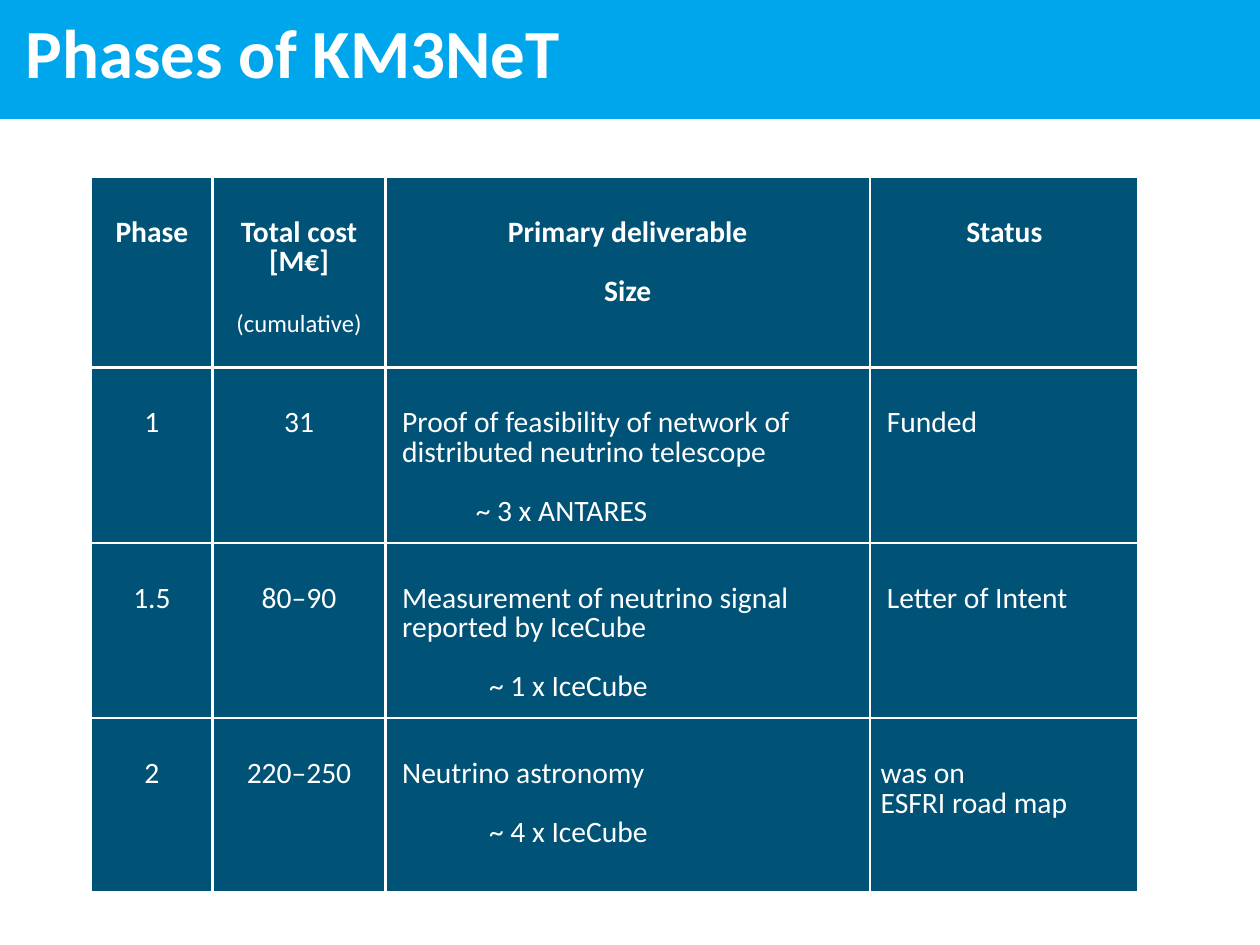
from pptx import Presentation
from pptx.dml.color import RGBColor
from pptx.enum.shapes import MSO_SHAPE
from pptx.enum.text import MSO_ANCHOR, PP_ALIGN
from pptx.oxml.ns import qn
from pptx.util import Inches, Pt
from lxml.etree import SubElement

SLIDE_W, SLIDE_H = 14.22, 10.67
SKY, PETROL, WHITE = "00A6EB", "005376", "FFFFFF"
FONT = "Calibri"
LINE = 24            # line pitch of the table, also the height of a skipped line
COLUMNS = [1.37, 1.95, 5.47, 3.03]
ROWS = [2.15, 1.98, 1.98, 1.97]
TOP_INSET = 0.16 + LINE / 72
TEXT_INDENT = 0.07

# Each line of a cell: (text, style overrides)
HEADER = [
    [("Phase", {})],
    [("Total cost", {}), ("[M€]", {}),
     ("(cumulative)", {"size": 20, "bold": False, "before": LINE})],
    [("Primary deliverable", {}), ("Size", {"before": LINE})],
    [("Status", {})],
]
PHASES = [
    ("1", "31",
     ["Proof of feasibility of network of", "distributed neutrino telescope"],
     "~ 3 x ANTARES", 0.9, ["Funded"], TEXT_INDENT),
    ("1.5", "80–90",
     ["Measurement of neutrino signal", "reported by IceCube"],
     "~ 1 x IceCube", 1.05, ["Letter of Intent"], TEXT_INDENT),
    ("2", "220–250", ["Neutrino astronomy"],
     "~ 4 x IceCube", 1.05, ["was on", "ESFRI road map"], 0),
]


def color(value):
    return RGBColor.from_string(value)


def add_text(paragraph, text, size, bold):
    run = paragraph.add_run()
    run.text = text
    run.font.name = FONT
    run.font.size = Pt(size)
    run.font.bold = bold
    run.font.color.rgb = color(WHITE)


def add_band(slide, left, top, width, height, line_width):
    band = slide.shapes.add_shape(MSO_SHAPE.RECTANGLE, Inches(left), Inches(top),
                                  Inches(width), Inches(height))
    band.shadow.inherit = False
    band.fill.solid()
    band.fill.fore_color.rgb = color(SKY)
    band.line.color.rgb = color(SKY)
    band.line.width = Pt(line_width)
    return band


def add_title(slide, left, top, width, height, text):
    """Draw the full-width header band with the title box inside it."""
    add_band(slide, left, top, width, height, 2)
    title = add_band(slide, left + 0.19, top + 0.25, width - 0.19, height - 0.5, 0.75)
    frame = title.text_frame
    frame.word_wrap = True
    frame.vertical_anchor = MSO_ANCHOR.MIDDLE
    paragraph = frame.paragraphs[0]
    paragraph.alignment = PP_ALIGN.LEFT
    paragraph.line_spacing = 0.8
    add_text(paragraph, text, 56, True)


def add_borders(cell):
    properties = cell._tc.get_or_add_tcPr()
    for position, side in enumerate(("a:lnL", "a:lnR", "a:lnT", "a:lnB")):
        border = SubElement(properties, qn(side), w=str(Pt(2.25)))
        fill = SubElement(border, qn("a:solidFill"))
        SubElement(fill, qn("a:srgbClr"), val=WHITE)
        properties.insert(position, border)


def fill_cell(cell, lines, align, bold, side_inset):
    cell.fill.solid()
    cell.fill.fore_color.rgb = color(PETROL)
    add_borders(cell)
    cell.margin_left = cell.margin_right = Inches(side_inset)
    cell.margin_top, cell.margin_bottom = Inches(TOP_INSET), 0
    frame = cell.text_frame
    for number, (text, style) in enumerate(lines):
        paragraph = frame.add_paragraph() if number else frame.paragraphs[0]
        paragraph.alignment = align
        paragraph.line_spacing = Pt(LINE)
        if "before" in style:
            paragraph.space_before = Pt(style["before"])
        if "indent" in style:
            paragraph._p.get_or_add_pPr().set("marL", str(Inches(style["indent"])))
        add_text(paragraph, text, style.get("size", 24), style.get("bold", bold))


def phase_cells(phase, cost, deliverable, size, size_indent, status, status_indent):
    """Return the four cells of one phase, each as a list of styled lines."""
    goal = [(line, {"indent": TEXT_INDENT}) for line in deliverable]
    goal.append((size, {"indent": size_indent, "before": LINE}))
    return [[(phase, {})], [(cost, {})], goal,
            [(line, {"indent": status_indent}) for line in status]]


def add_phase_table(slide, left, top):
    table = slide.shapes.add_table(
        len(ROWS), len(COLUMNS), Inches(left), Inches(top),
        Inches(sum(COLUMNS)), Inches(sum(ROWS))).table
    table.horz_banding = False
    for column, width in zip(table.columns, COLUMNS):
        column.width = Inches(width)
    for row, height in zip(table.rows, ROWS):
        row.height = Inches(height)
    for c, lines in enumerate(HEADER):
        fill_cell(table.cell(0, c), lines, PP_ALIGN.CENTER, True, 0)
    for r, phase in enumerate(PHASES, 1):
        for c, lines in enumerate(phase_cells(*phase)):
            align = PP_ALIGN.CENTER if c < 2 else PP_ALIGN.LEFT
            fill_cell(table.cell(r, c), lines, align, False, 0.12)


def main():
    deck = Presentation()
    deck.slide_width, deck.slide_height = Inches(SLIDE_W), Inches(SLIDE_H)
    slide = deck.slides.add_slide(deck.slide_layouts[6])
    add_title(slide, 0, 0, SLIDE_W, SLIDE_H / 8, "Phases of KM3NeT")
    add_phase_table(slide, 1.03, 2)
    deck.save("out.pptx")


if __name__ == "__main__":
    main()
